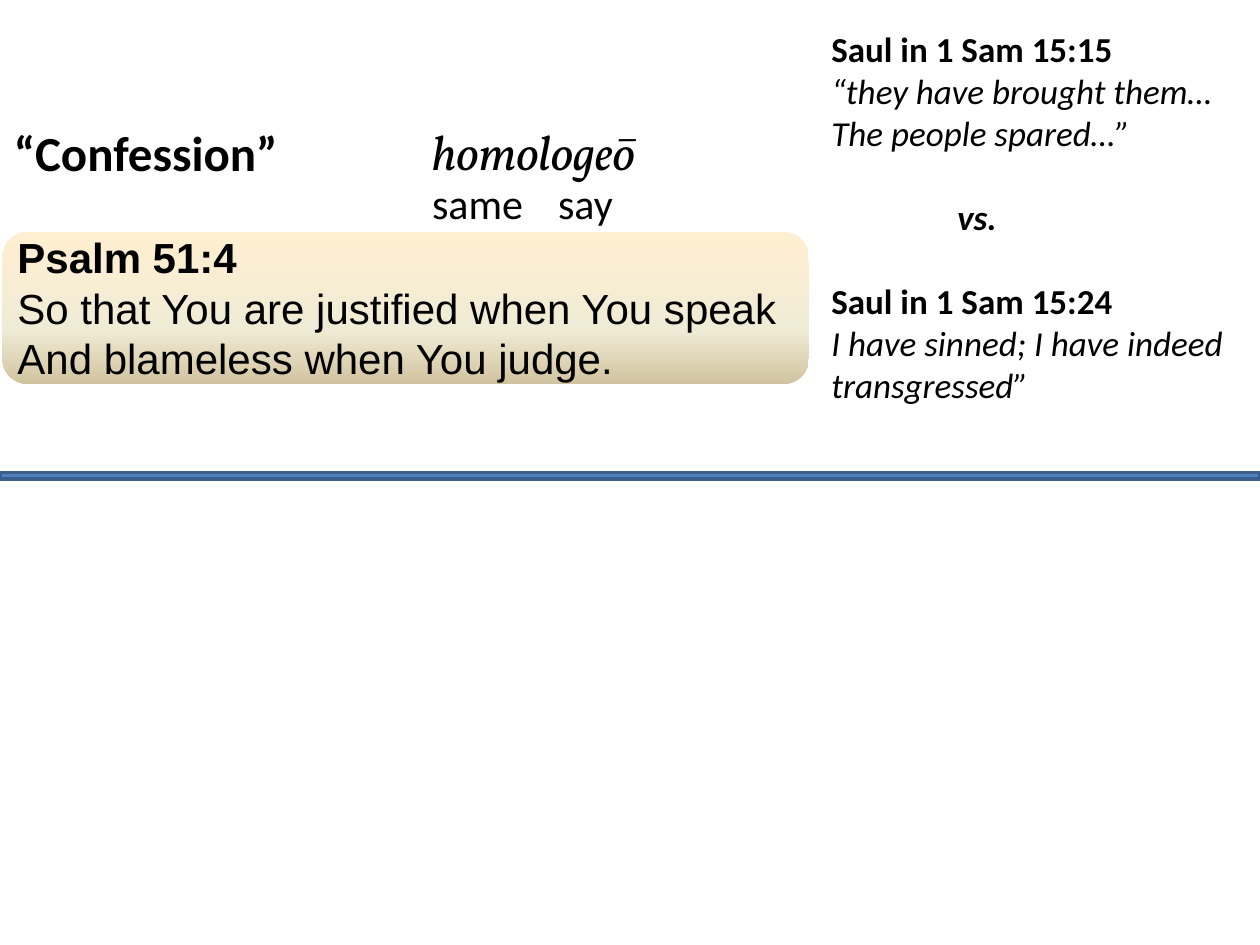
from dataclasses import dataclass

from lxml.etree import SubElement
from pptx import Presentation
from pptx.dml.color import RGBColor
from pptx.enum.shapes import MSO_SHAPE
from pptx.enum.text import MSO_ANCHOR, MSO_AUTO_SIZE, PP_ALIGN
from pptx.oxml.ns import qn
from pptx.util import Pt


@dataclass
class Line:
    text: str
    size: float
    font: str = "Calibri"
    bold: bool = False
    italic: bool = False
    space_before: float = 0
    indent: float = 0


@dataclass
class Box:
    left: float
    top: float
    width: float
    height: float


def color(hex_code: str) -> RGBColor:
    return RGBColor.from_string(hex_code)


def place(shape, box: Box) -> None:
    shape.left, shape.top = Pt(box.left), Pt(box.top)
    shape.width, shape.height = Pt(box.width), Pt(box.height)


def write_lines(shape, lines: list[Line]) -> None:
    frame = shape.text_frame
    frame.word_wrap = True
    frame.auto_size = MSO_AUTO_SIZE.NONE
    frame.vertical_anchor = MSO_ANCHOR.TOP
    frame.text = "\n".join("" for _ in lines)
    for paragraph, line in zip(frame.paragraphs, lines):
        paragraph.text = line.text
        paragraph.alignment = PP_ALIGN.LEFT
        if line.space_before:
            paragraph.space_before = Pt(line.space_before)
        if line.indent:
            paragraph._p.get_or_add_pPr().set("marL", str(Pt(line.indent)))
        for run in paragraph.runs:
            run.font.name = line.font
            run.font.size = Pt(line.size)
            run.font.bold = line.bold
            run.font.italic = line.italic
            run.font.color.rgb = color("000000")


def add_text(slide, box: Box, lines: list[Line]) -> None:
    shape = slide.shapes.add_textbox(0, 0, 0, 0)
    place(shape, box)
    write_lines(shape, lines)


def add_shape(slide, kind: MSO_SHAPE, box: Box):
    shape = slide.shapes.add_shape(kind, 0, 0, 0, 0)
    place(shape, box)
    shape.shadow.inherit = False
    return shape


def fill_downward(shape, stops: list[tuple[int, str]]) -> None:
    """Fill with a top-to-bottom gradient; stops are (percent, colour)."""
    shape.fill.gradient()
    shape.fill.gradient_angle = 270
    stop_list = shape._element.spPr.find(qn("a:gradFill")).find(qn("a:gsLst"))
    for stop in list(stop_list):
        stop_list.remove(stop)
    for percent, hex_code in stops:
        stop = SubElement(stop_list, qn("a:gs"), pos=str(percent * 1000))
        SubElement(stop, qn("a:srgbClr"), val=hex_code)


def main() -> None:
    presentation = Presentation()
    presentation.slide_width, presentation.slide_height = Pt(720), Pt(540)
    slide = presentation.slides.add_slide(presentation.slide_layouts[5])

    title = slide.shapes.title
    place(title, Box(0.7, 66.2, 348.5, 41))
    write_lines(title, [Line("“Confession”", 28, bold=True)])

    verse_panel = add_shape(slide, MSO_SHAPE.ROUNDED_RECTANGLE, Box(1.4, 132.5, 460.8, 86.8))
    fill_downward(verse_panel, [(0, "FFEFD1"), (65, "F0EBD5"), (100, "D1C39F")])
    verse_panel.line.fill.background()
    add_text(slide, Box(2.9, 128.9, 506.9, 94.3), [
        Line("Psalm 51:4", 24, "Arial", bold=True),
        Line("So that You are justified when You speak\vAnd blameless when You judge.", 24, "Arial"),
    ])

    add_text(slide, Box(239.8, 66.2, 174.2, 41),
             [Line("homologeō", 28, "Vollkorn", italic=True)])
    add_text(slide, Box(239.8, 97.9, 174.2, 36), [Line("same\tsay", 24)])

    divider = add_shape(slide, MSO_SHAPE.RECTANGLE, Box(0, 270, 720, 3.6))
    divider.fill.solid()
    divider.fill.fore_color.rgb = color("4F81BD")
    divider.line.color.rgb = color("3A5F8C")
    divider.line.width = Pt(2)

    add_text(slide, Box(468, 12.2, 239.8, 209.5), [
        Line("Saul in 1 Sam 15:15", 20, bold=True),
        Line("“they have brought them…", 20, italic=True),
        Line("The people spared…”", 20, italic=True),
        Line("vs.", 20, bold=True, italic=True, space_before=24, indent=72),
        Line("Saul in 1 Sam 15:24", 20, bold=True, space_before=24),
        Line("I have sinned; I have indeed transgressed”", 20, italic=True),
    ])

    presentation.save("out.pptx")


if __name__ == "__main__":
    main()
